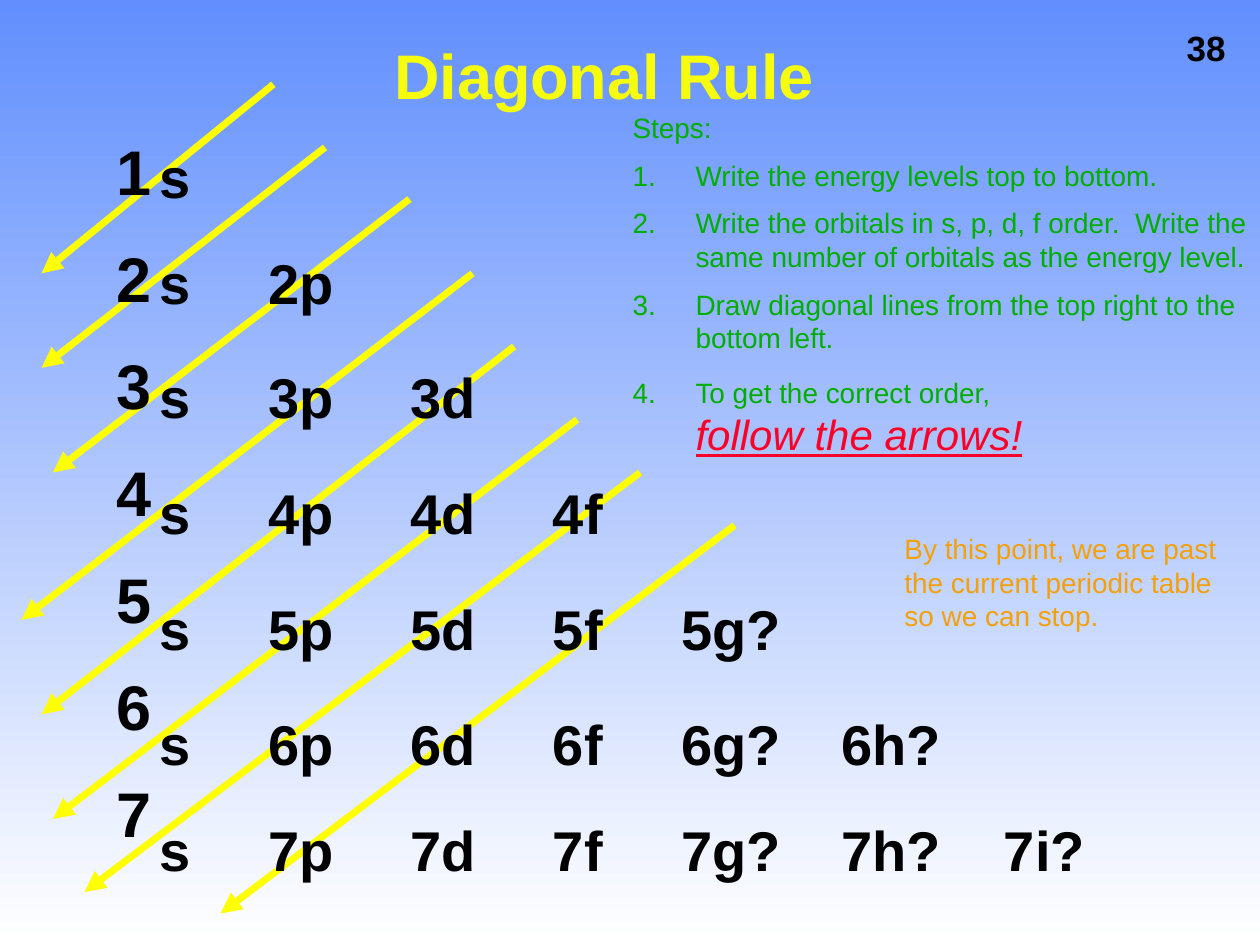
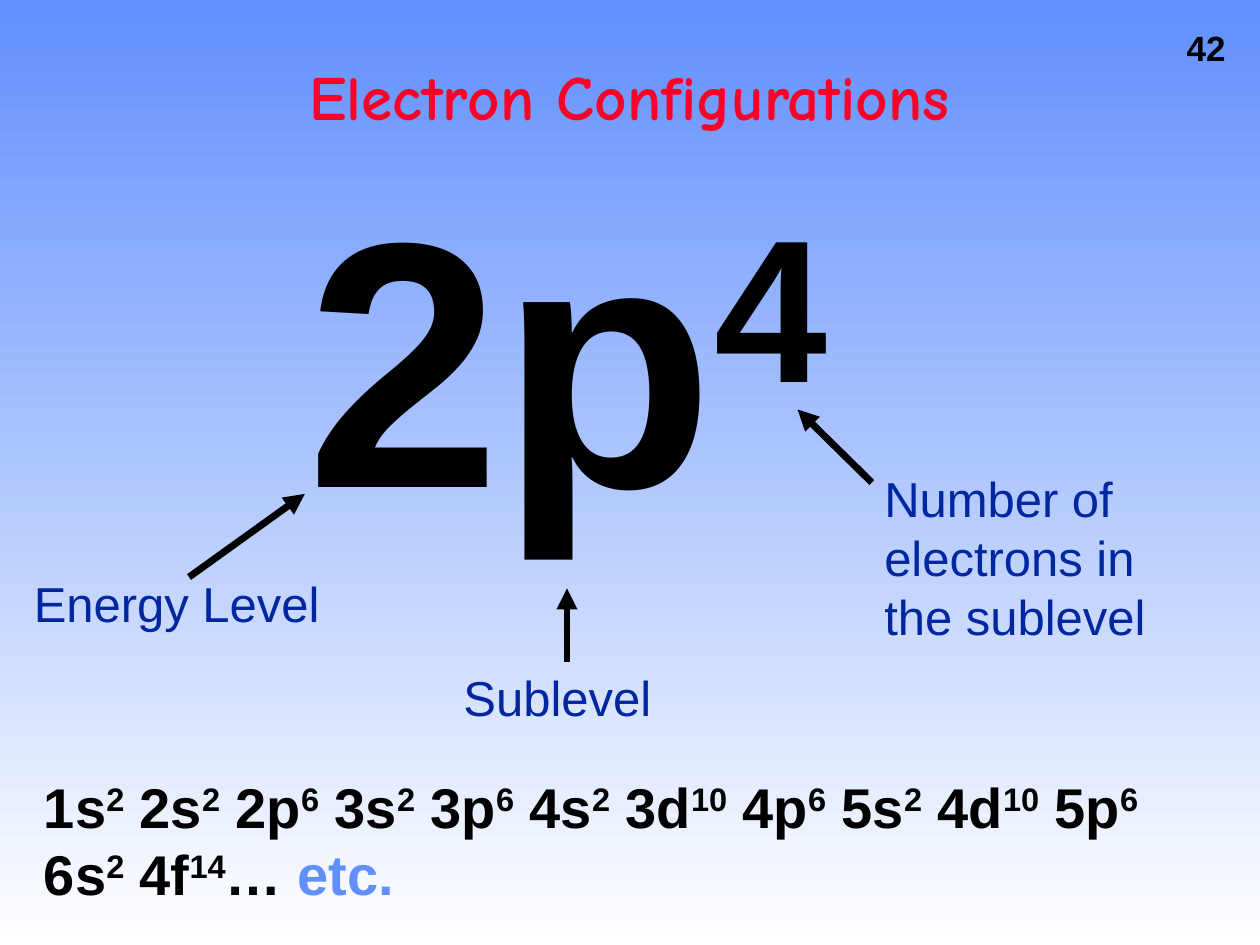
from lxml.etree import SubElement
from pptx import Presentation
from pptx.dml.color import RGBColor
from pptx.enum.shapes import MSO_CONNECTOR
from pptx.enum.text import MSO_ANCHOR, MSO_AUTO_SIZE, PP_ALIGN
from pptx.oxml.ns import qn
from pptx.util import Inches, Pt

BLACK, YELLOW, RED, NAVY = "000000", "FFFF00", "FC0128", "00279F"
SKY, WHITE, GREEN, ORANGE, LEMON = "618FFD", "FFFFFF", "00AE00", "F3A00B", "F6FC0E"

PAGE_STYLE = dict(size=Pt(20), color=BLACK, bold=True)
TITLE_STYLE = dict(size=Pt(36), color=LEMON, bold=True)
LEVEL_STYLE = dict(size=Pt(36), color=BLACK, bold=True)
ORBITAL_STYLE = dict(size=Pt(32), color=BLACK, bold=True)
STEP_STYLE = dict(size=Pt(16), color=GREEN, bold=False)
EMPHASIS_STYLE = dict(size=Pt(24), color=RED, bold=False, italic=True, underline=True)
NOTE_STYLE = dict(size=Pt(16), color=ORANGE)
LABEL_STYLE = dict(size=Pt(28), color=NAVY)
SAMPLE_STYLE = dict(size=Pt(200), color=BLACK, bold=True)

SUBLEVELS = "spdfghi"
COLUMN_TABS = [0.86, 1.99, 3.12, 4.14, 5.41, 6.7]
ORBITAL_ROWS = [  # top and width of each energy level's row
    (1.08, 0.42), (1.92, 3.33), (2.83, 4.25), (3.75, 4.33),
    (4.67, 6), (5.58, 7.17), (6.42, 8.83),
]
DIAGONALS = [  # start and end of each arrow
    ((5.83, 4.17), (1.75, 7.25)), ((5.08, 3.75), (0.67, 7.08)),
    ((4.58, 3.33), (0.42, 6.5)), ((4.08, 2.75), (0.33, 5.67)),
    ((3.75, 2.17), (0.17, 4.92)), ((3.25, 1.58), (0.42, 3.75)),
    ((2.58, 1.17), (0.33, 2.92)),
    ((2.17, 0.67), (0.33, 2.17)),
]
STEPS = [
    "Write the energy levels top to bottom.",
    "Write the orbitals in s, p, d, f order.  Write the same number of "
    "orbitals as the energy level.",
    "Draw diagonal lines from the top right to the bottom left.",
    "To get the correct order,",
]
CONFIGURATION = "1s2 2s2 2p6 3s2 3p6 4s2 3d10 4p6 5s2 4d10 5p6 6s2 4f14"


def rgb(code):
    return RGBColor.from_string(code)


def add_run(paragraph, text, style, raised=False, face="Arial"):
    run = paragraph.add_run()
    run.text = text
    run.font.name = face
    for key, value in style.items():
        if key == "color":
            run.font.color.rgb = rgb(value)
        else:
            setattr(run.font, key, value)
    if raised:
        run.font._element.set("baseline", "30000")


def set_space_before(paragraph, percent):
    """Give the space before a paragraph as a share of its line height."""
    paragraph.space_before = Pt(0)
    space = paragraph._p.pPr.find(qn("a:spcBef"))
    space.clear()
    SubElement(space, qn("a:spcPct"), val=str(percent * 1000))


def set_marker(paragraph, indent=0, numbered=False):
    """Set a hanging indent, with a number or with no bullet."""
    props = paragraph._p.get_or_add_pPr()
    props.set("marL", str(Inches(indent)))
    props.set("indent", str(-Inches(indent)))
    if numbered:
        SubElement(props, qn("a:buAutoNum"), type="arabicPeriod")
    else:
        SubElement(props, qn("a:buNone"))


def set_tabs(paragraph, stops):
    tabs = SubElement(paragraph._p.get_or_add_pPr(), qn("a:tabLst"))
    for stop in stops:
        SubElement(tabs, qn("a:tab"), pos=str(Inches(stop)), algn="l")


def place(shape, left, top, width, height):
    bounds = dict(left=left, top=top, width=width, height=height)
    for key, value in bounds.items():
        setattr(shape, key, Inches(value))
    shape.text_frame.auto_size = MSO_AUTO_SIZE.NONE


def add_text(slide, bounds, lines, style, spacing=50, wrap=True):
    box = slide.shapes.add_textbox(*map(Inches, bounds))
    frame = box.text_frame
    frame.word_wrap = wrap
    for index, line in enumerate(lines):
        paragraph = frame.add_paragraph() if index else frame.paragraphs[0]
        set_space_before(paragraph, spacing)
        if line:
            add_run(paragraph, line, style)
    return box


def add_arrow(slide, start, end, color):
    arrow = slide.shapes.add_connector(
        MSO_CONNECTOR.STRAIGHT, *map(Inches, (*start, *end)))
    arrow.line.color.rgb = rgb(color)
    arrow.line.width = Pt(4)
    SubElement(arrow.line._get_or_add_ln(), qn("a:tailEnd"), type="triangle")
    SubElement(arrow._element.spPr, qn("a:effectLst"))
    return arrow


def set_background(master):
    fill = master.background.fill
    fill.gradient()
    fill.gradient_angle = 270
    for stop, color, position in zip(fill.gradient_stops, (SKY, WHITE), (0, 1)):
        stop.color.rgb = rgb(color)
        stop.position = position


def add_slide(prs, number, title, bounds, color=LEMON, face="Arial"):
    slide = prs.slides.add_slide(prs.slide_layouts[1])
    heading = slide.shapes.title
    place(heading, *bounds)
    heading.text_frame.vertical_anchor = MSO_ANCHOR.MIDDLE
    paragraph = heading.text_frame.paragraphs[0]
    paragraph.alignment = PP_ALIGN.CENTER
    paragraph.line_spacing = 0.9
    add_run(paragraph, title, {**TITLE_STYLE, "color": color}, face=face)
    add_text(slide, (9.32, 0.16, 0.54, 0.43), [number], PAGE_STYLE, 0, wrap=False)
    return slide


def add_steps(slide):
    body = slide.placeholders[1]
    place(body, 4.92, 0.83, 5.08, 3.17)
    frame = body.text_frame
    for index, line in enumerate(["Steps:", *STEPS]):
        paragraph = frame.add_paragraph() if index else frame.paragraphs[0]
        set_space_before(paragraph, 50)
        set_marker(paragraph, 0.5, numbered=index > 0)
        add_run(paragraph, line, STEP_STYLE)
    paragraph.add_line_break()
    line_break = paragraph._p.find(qn("a:br"))
    SubElement(line_break, qn("a:rPr"), sz="1600")
    add_run(paragraph, "follow the arrows!", EMPHASIS_STYLE)


def add_orbital_row(slide, level, top, width):
    orbitals = [f"{level}{name}" + ("?" if name in "ghi" else "")
                for name in SUBLEVELS[1:level]]
    row = add_text(slide, (1.17, top, width, 0.63),
                   ["\t".join(["s", *orbitals])], ORBITAL_STYLE, 0)
    set_tabs(row.text_frame.paragraphs[0], COLUMN_TABS)


def build_diagonal_rule(prs):
    slide = add_slide(prs, "38", "Diagonal Rule", (2.42, 0, 4.75, 1.25))
    for start, end in DIAGONALS:
        add_arrow(slide, start, end, YELLOW)
    for level, (top, width) in enumerate(ORBITAL_ROWS, 1):
        add_orbital_row(slide, level, top, width)
    add_text(slide, (0.83, 1, 0.42, 6.11), "1234567", LEVEL_STYLE)
    add_steps(slide)
    add_text(slide, (7.08, 4.17, 2.92, 0.9),
             ["By this point, we are past the current periodic table so we can stop."],
             NOTE_STYLE)


def add_sample_orbital(slide):
    body = slide.placeholders[1]
    place(body, 2.33, 1.42, 4.75, 2.67)
    paragraph = body.text_frame.paragraphs[0]
    paragraph.line_spacing = 0.9
    set_space_before(paragraph, 30)
    set_marker(paragraph, 0.31)
    add_run(paragraph, "2p", SAMPLE_STYLE)
    add_run(paragraph, "4", SAMPLE_STYLE, raised=True)


def add_configuration(slide):
    box = add_text(slide, (0.25, 6.08, 9.42, 1.17), [""], ORBITAL_STYLE)
    paragraph = box.text_frame.paragraphs[0]
    for index, orbital in enumerate(CONFIGURATION.split()):
        gap = " " if index else ""
        add_run(paragraph, gap + orbital[:2], ORBITAL_STYLE)
        add_run(paragraph, orbital[2:], ORBITAL_STYLE, raised=True)
    add_run(paragraph, "… ", ORBITAL_STYLE)
    add_run(paragraph, "etc.", {**ORBITAL_STYLE, "color": SKY})


def build_electron_configurations(prs):
    slide = add_slide(prs, "42", "Electron Configurations",
                      (1.08, 0.17, 7.83, 1.25), RED, "Comic Neue")
    add_sample_orbital(slide)
    add_text(slide, (0.17, 4.5, 2.67, 0.57), ["Energy Level"], LABEL_STYLE)
    sublevel = add_text(slide, (3.58, 5.25, 1.84, 0.57), ["Sublevel"], LABEL_STYLE)
    add_text(slide, (6.92, 3.67, 2.83, 1.5),
             ["Number of electrons in the sublevel"], LABEL_STYLE)
    add_arrow(slide, (1.5, 4.58), (2.42, 3.92), BLACK)
    sublevel_arrow = add_arrow(slide, (4.5, 5.25), (4.5, 4.67), BLACK)
    sublevel_arrow.begin_connect(sublevel, 0)
    add_arrow(slide, (6.92, 3.83), (6.33, 3.25), BLACK)
    add_configuration(slide)


def main():
    prs = Presentation()
    prs.slide_width, prs.slide_height = Inches(10), Inches(7.5)
    set_background(prs.slide_master)
    build_diagonal_rule(prs)
    build_electron_configurations(prs)
    prs.save("out.pptx")


if __name__ == "__main__":
    main()
